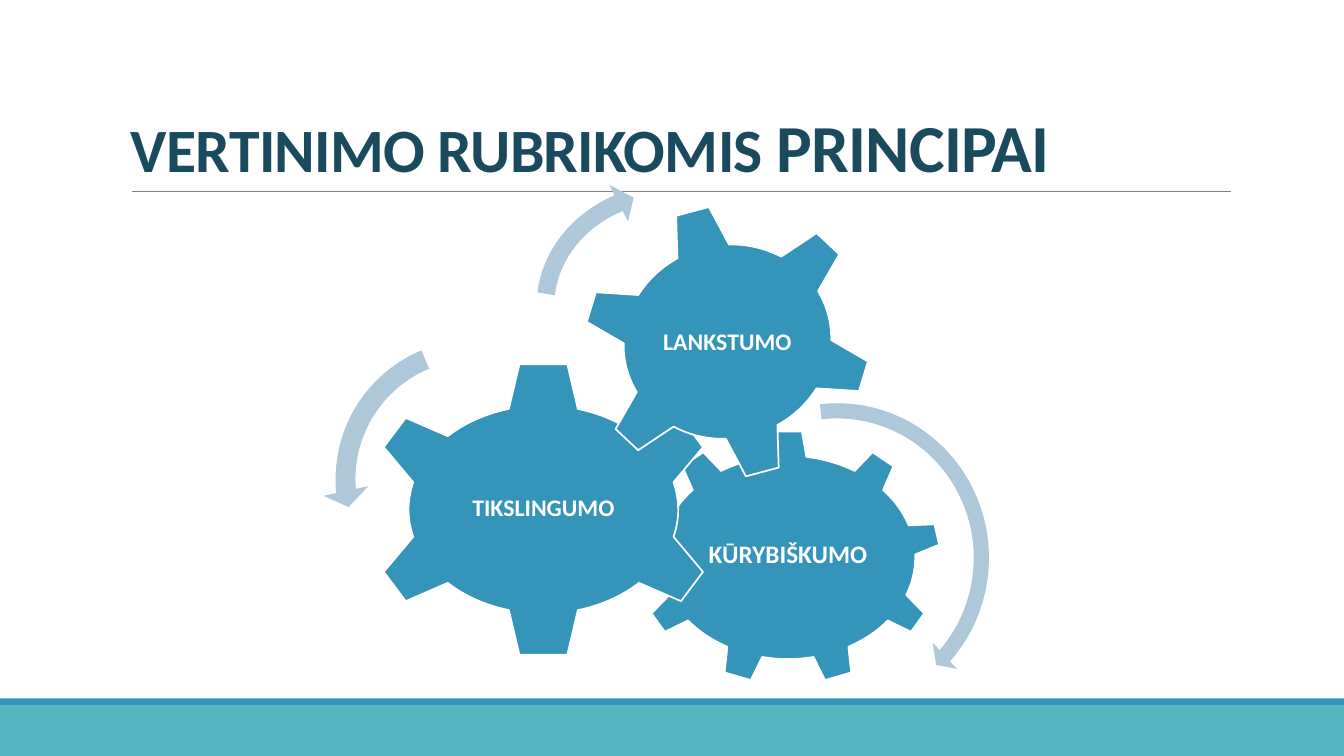
from dataclasses import dataclass

from lxml.etree import SubElement
from pptx import Presentation
from pptx.dml.color import RGBColor
from pptx.enum.shapes import MSO_CONNECTOR, MSO_SHAPE as Preset
from pptx.enum.text import MSO_ANCHOR as Anchor, PP_ALIGN as Align
from pptx.oxml.ns import qn
from pptx.util import Inches, Pt

COLORS = {
    "teal": "58B6C0",
    "blue": "3494BA",
    "rule": "808080",
    "title": "1A4A5D",
    "white": "FFFFFF",
    "arrow": "AEC8D9",
}
FONT = "Calibri"
DEGREE = 0.6
PERCENT = 0.01


@dataclass(frozen=True)
class Box:
    left: float
    top: float
    width: float
    height: float

    def lengths(self) -> list:
        return [Inches(v) for v in (self.left, self.top, self.width, self.height)]


@dataclass(frozen=True)
class Gear:
    preset: Preset
    box: Box
    label: str
    label_box: Box
    size: float
    inset: float
    rotation: float = 0


@dataclass(frozen=True)
class CurvedArrow:
    preset: Preset
    box: Box
    thickness: float
    head_angle: float
    end_angle: float
    start_angle: float
    head_width: float
    rotation: float = 0


BANDS = [
    (Box(0, 7, 13.33, 0.5), "teal"),
    (Box(0, 6.93, 13.33, 0.07), "blue"),
]
TITLE_BOX = Box(1.2, 0.31, 11, 1.59)
TITLE_PARTS = [("VERTINIMO RUBRIKOMIS ", 44), ("PRINCIPAI", 48)]
GEARS = [
    Gear(Preset.GEAR_9, Box(6.3, 4.27, 3.03, 2.52),
         "KŪRYBIŠKUMO", Box(6.87, 4.86, 1.89, 1.29), 18, 0.03),
    Gear(Preset.GEAR_6, Box(3.61, 3.58, 3.56, 2.95),
         "TIKSLINGUMO", Box(4.44, 4.32, 1.9, 1.46), 17, 0.02),
    Gear(Preset.GEAR_6, Box(5.77, 2.02, 2.89, 2.74),
         "LANKSTUMO", Box(6.41, 2.62, 1.61, 1.56), 17, 0.02, 345),
]
ARROWS = [
    CurvedArrow(Preset.CIRCULAR_ARROW, Box(6.7, 3.9, 3.21, 3.27),
                4.7, 4.98, 42.32, 263.54, 5.5),
    CurvedArrow(Preset.LEFT_CIRCULAR_ARROW, Box(3.2, 3.24, 3.03, 3.03),
                6.5, 7.17, 174.82, 247.3, 7.5),
    CurvedArrow(Preset.CIRCULAR_ARROW, Box(5.19, 1.7, 3.43, 2.92),
                6, 6.57, 221.9, 175.14, 7, 14.2),
]


def color(name: str) -> RGBColor:
    return RGBColor.from_string(COLORS[name])


def add_filled(slide, preset: Preset, box: Box, fill: str, rotation: float = 0):
    shape = slide.shapes.add_shape(preset, *box.lengths())
    shape.shadow.inherit = False
    shape.fill.solid()
    shape.fill.fore_color.rgb = color(fill)
    shape.line.fill.background()
    shape.rotation = rotation
    return shape


def add_text_frame(slide, box: Box, anchor: Anchor):
    frame = slide.shapes.add_textbox(*box.lengths()).text_frame
    frame.word_wrap = True
    frame.vertical_anchor = anchor
    return frame


def format_run(run, size: float, font_color: str) -> None:
    run.font.name = FONT
    run.font.size = Pt(size)
    run.font.bold = True
    run.font.color.rgb = color(font_color)


def add_title(slide) -> None:
    paragraph = add_text_frame(slide, TITLE_BOX, Anchor.BOTTOM).paragraphs[0]
    paragraph.line_spacing = 0.85
    for text, size in TITLE_PARTS:
        run = paragraph.add_run()
        run.text = text
        format_run(run, size, "title")
        run.font._element.set("spc", "-50")


def add_rule(slide) -> None:
    rule = slide.shapes.add_connector(
        MSO_CONNECTOR.STRAIGHT, Inches(1.31), Inches(1.9), Inches(12.21), Inches(1.9))
    rule.line.color.rgb = color("rule")
    rule.line.width = Pt(0.5)
    SubElement(rule._element.spPr, qn("a:effectLst"))


def add_gear(slide, gear: Gear) -> None:
    shape = add_filled(slide, gear.preset, gear.box, "blue", gear.rotation)
    shape.line.color.rgb = color("white")
    shape.line.width = Pt(1.25)
    frame = add_text_frame(slide, gear.label_box, Anchor.MIDDLE)
    frame.margin_left = frame.margin_right = Inches(gear.inset)
    frame.margin_top = frame.margin_bottom = Inches(gear.inset)
    frame.text = gear.label
    paragraph = frame.paragraphs[0]
    paragraph.alignment = Align.CENTER
    paragraph.line_spacing = 0.9
    format_run(paragraph.runs[0], gear.size, "white")


def add_curved_arrow(slide, arrow: CurvedArrow) -> None:
    shape = add_filled(slide, arrow.preset, arrow.box, "arrow", arrow.rotation)
    adjustments = (
        arrow.thickness * PERCENT,
        arrow.head_angle * DEGREE,
        arrow.end_angle * DEGREE,
        arrow.start_angle * DEGREE,
        arrow.head_width * PERCENT,
    )
    for index, value in enumerate(adjustments):
        shape.adjustments[index] = value


def main() -> None:
    presentation = Presentation()
    presentation.slide_width = Inches(13.33)
    presentation.slide_height = Inches(7.5)
    slide = presentation.slides.add_slide(presentation.slide_layouts[6])
    for box, fill in BANDS:
        add_filled(slide, Preset.RECTANGLE, box, fill)
    add_rule(slide)
    add_title(slide)
    for gear in GEARS:
        add_gear(slide, gear)
    for arrow in ARROWS:
        add_curved_arrow(slide, arrow)
    presentation.save("out.pptx")


if __name__ == "__main__":
    main()
